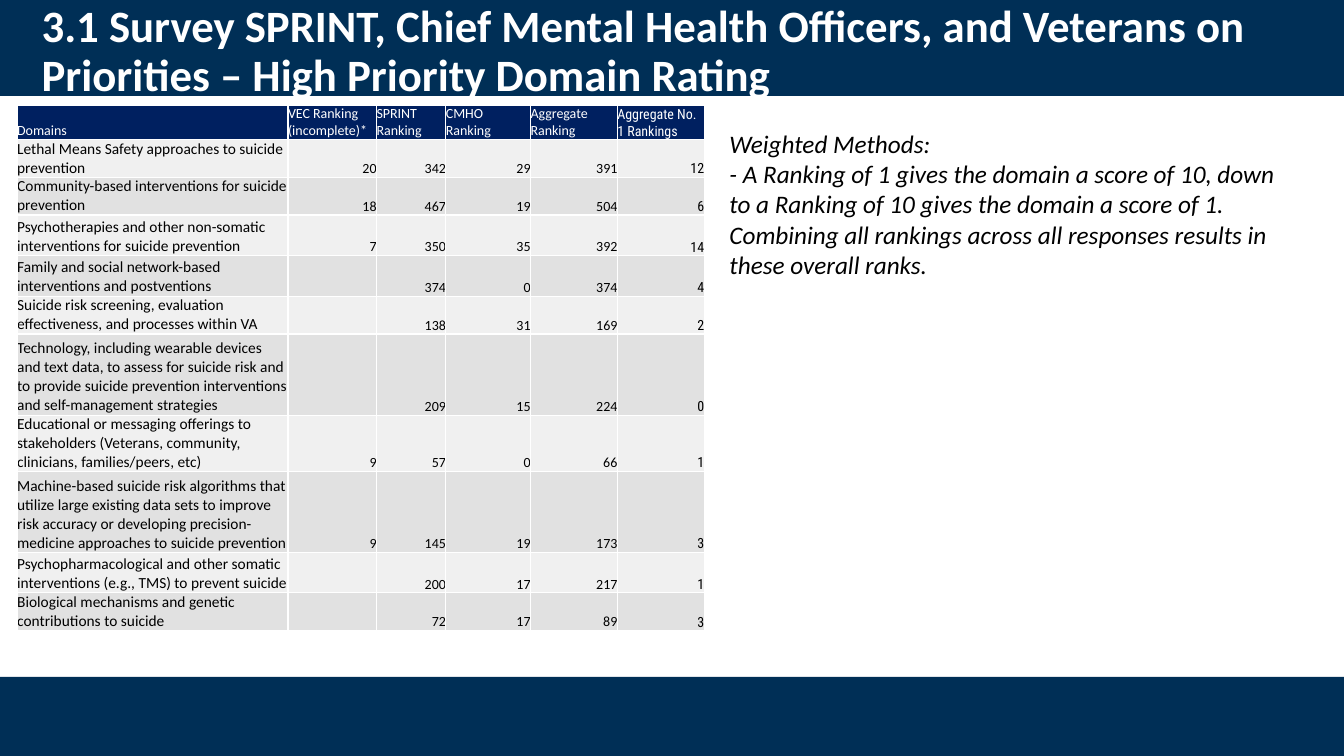
from dataclasses import dataclass

import lxml.etree
import pptx
import pptx.dml.color
import pptx.enum.shapes
import pptx.enum.text
import pptx.oxml.ns
import pptx.slide
import pptx.table
import pptx.text.text
import pptx.util

Pt = pptx.util.Pt
Align = pptx.enum.text.PP_ALIGN
NAVY, HEADER, WHITE, BLACK = "002F56", "002060", "FFFFFF", "000000"
ROW_FILLS = ("F0F0F0", "E1E1E1")
BODY_FONT, LAST_COLUMN_FONT = "Calibri", "Roboto Condensed"


@dataclass
class Band:
    top: float
    height: float


@dataclass
class Domain:
    name: str
    scores: tuple[str, ...]
    height: float


BANDS = [Band(0, 68.5), Band(483.5, 56.5)]
COLUMN_WIDTHS = [193.5, 63.25, 49.5, 60.5, 62, 62]
HEADINGS = ["Domains", "VEC Ranking (incomplete)*", "SPRINT\vRanking",
            "CMHO Ranking", "Aggregate Ranking", "Aggregate No. 1 Rankings"]
DOMAINS = [
    Domain("Lethal Means Safety approaches to suicide prevention",
           ("20", "342", "29", "391", "12"), 27),
    Domain("Community-based interventions for suicide prevention",
           ("18", "467", "19", "504", "6"), 27),
    Domain("Psychotherapies and other non-somatic interventions for suicide prevention",
           ("7", "350", "35", "392", "14"), 29),
    Domain("Family and social network-based interventions and postventions",
           ("", "374", "0", "374", "4"), 29),
    Domain("Suicide risk screening, evaluation effectiveness, and processes within VA",
           ("", "138", "31", "169", "2"), 27),
    Domain("Technology, including wearable devices and text data, to assess for suicide risk "
           "and to provide suicide prevention interventions and self-management strategies",
           ("", "209", "15", "224", "0"), 58),
    Domain("Educational or messaging offerings to stakeholders (Veterans, community, "
           "clinicians, families/peers, etc)",
           ("9", "57", "0", "66", "1"), 40),
    Domain("Machine-based suicide risk algorithms that utilize large existing data sets to improve "
           "risk accuracy or developing precision-medicine approaches to suicide prevention",
           ("9", "145", "19", "173", "3"), 58),
    Domain("Psychopharmacological and other somatic interventions (e.g., TMS) to prevent suicide",
           ("", "200", "17", "217", "1"), 29),
    Domain("Biological mechanisms and genetic contributions to suicide",
           ("", "72", "17", "89", "3"), 27),
]
METHODS = [
    "Weighted Methods:",
    "- A Ranking of 1 gives the domain a score of 10, down to a Ranking of 10 gives the domain "
    "a score of 1. Combining all rankings across all responses results in these overall ranks.",
]


def color(value: str) -> pptx.dml.color.RGBColor:
    return pptx.dml.color.RGBColor.from_string(value)


def style(paragraph: pptx.text.text._Paragraph, size: float, ink: str, name: str = BODY_FONT,
          align: Align = Align.LEFT, bold: bool = False, italic: bool = False) -> None:
    paragraph.alignment = align
    font = paragraph.font
    font.name, font.size, font.bold, font.italic = name, Pt(size), bold, italic
    font.color.rgb = color(ink)


def add_band(slide: pptx.slide.Slide, band: Band, width: int) -> None:
    shape = slide.shapes.add_shape(pptx.enum.shapes.MSO_SHAPE.RECTANGLE,
                                   0, Pt(band.top), width, Pt(band.height))
    shape.shadow.inherit = False
    shape.fill.solid()
    shape.fill.fore_color.rgb = color(NAVY)
    shape.line.fill.background()


def add_title(slide: pptx.slide.Slide) -> None:
    title = slide.shapes.title
    slide.shapes.element.append(title.element)
    title.left, title.top, title.width, title.height = Pt(22.5), Pt(13), Pt(903), Pt(49)
    frame = title.text_frame
    frame.text = ("3.1 Survey SPRINT, Chief Mental Health Officers, and Veterans on Priorities "
                  "– High Priority Domain Rating")
    frame.word_wrap = True
    frame.auto_size = pptx.enum.text.MSO_AUTO_SIZE.NONE
    frame.vertical_anchor = pptx.enum.text.MSO_ANCHOR.MIDDLE
    frame.paragraphs[0].line_spacing = 0.9
    style(frame.paragraphs[0], 32, WHITE, bold=True)


def add_methods(slide: pptx.slide.Slide) -> None:
    frame = slide.shapes.add_textbox(Pt(514), Pt(88), Pt(418.5), Pt(116.5)).text_frame
    frame.word_wrap = True
    frame.text = "\n".join(METHODS)
    for paragraph in frame.paragraphs:
        style(paragraph, 18, BLACK, italic=True)


def add_borders(cell: pptx.table._Cell) -> None:
    properties = cell._tc.get_or_add_tcPr()
    for side in ("a:lnL", "a:lnR", "a:lnT", "a:lnB"):
        line = lxml.etree.SubElement(properties, pptx.oxml.ns.qn(side), w=str(Pt(1)))
        fill = lxml.etree.SubElement(line, pptx.oxml.ns.qn("a:solidFill"))
        lxml.etree.SubElement(fill, pptx.oxml.ns.qn("a:srgbClr"), val=WHITE)


def fill_cell(cell: pptx.table._Cell, text: str, row: int, column: int) -> None:
    is_header = row == 0
    add_borders(cell)
    cell.fill.solid()
    cell.fill.fore_color.rgb = color(HEADER if is_header else ROW_FILLS[(row - 1) % 2])
    cell.margin_left = cell.margin_right = cell.margin_top = cell.margin_bottom = 0
    cell.vertical_anchor = pptx.enum.text.MSO_ANCHOR.BOTTOM
    cell.text = text
    style(cell.text_frame.paragraphs[0],
          size=11 if column == 0 and not is_header else 10,
          ink=WHITE if is_header else BLACK,
          name=LAST_COLUMN_FONT if column == len(HEADINGS) - 1 else BODY_FONT,
          align=Align.LEFT if is_header or column == 0 else Align.RIGHT)


def add_ranking_table(slide: pptx.slide.Slide) -> None:
    heights = [24] + [domain.height for domain in DOMAINS]
    rows = [HEADINGS] + [[domain.name, *domain.scores] for domain in DOMAINS]
    table = slide.shapes.add_table(len(rows), len(HEADINGS), Pt(12.25), Pt(75.5),
                                   Pt(sum(COLUMN_WIDTHS)), Pt(sum(heights))).table
    table.horz_banding = False
    table.first_row = False
    for column, width in enumerate(COLUMN_WIDTHS):
        table.columns[column].width = Pt(width)
    for row, texts in enumerate(rows):
        table.rows[row].height = Pt(heights[row])
        for column, text in enumerate(texts):
            fill_cell(table.cell(row, column), text, row, column)


def main() -> None:
    presentation = pptx.Presentation()
    presentation.slide_width, presentation.slide_height = Pt(960), Pt(540)
    slide = presentation.slides.add_slide(presentation.slide_layouts.get_by_name("Title Only"))
    for band in BANDS:
        add_band(slide, band, presentation.slide_width)
    add_title(slide)
    add_methods(slide)
    add_ranking_table(slide)
    presentation.save("out.pptx")


if __name__ == "__main__":
    main()
